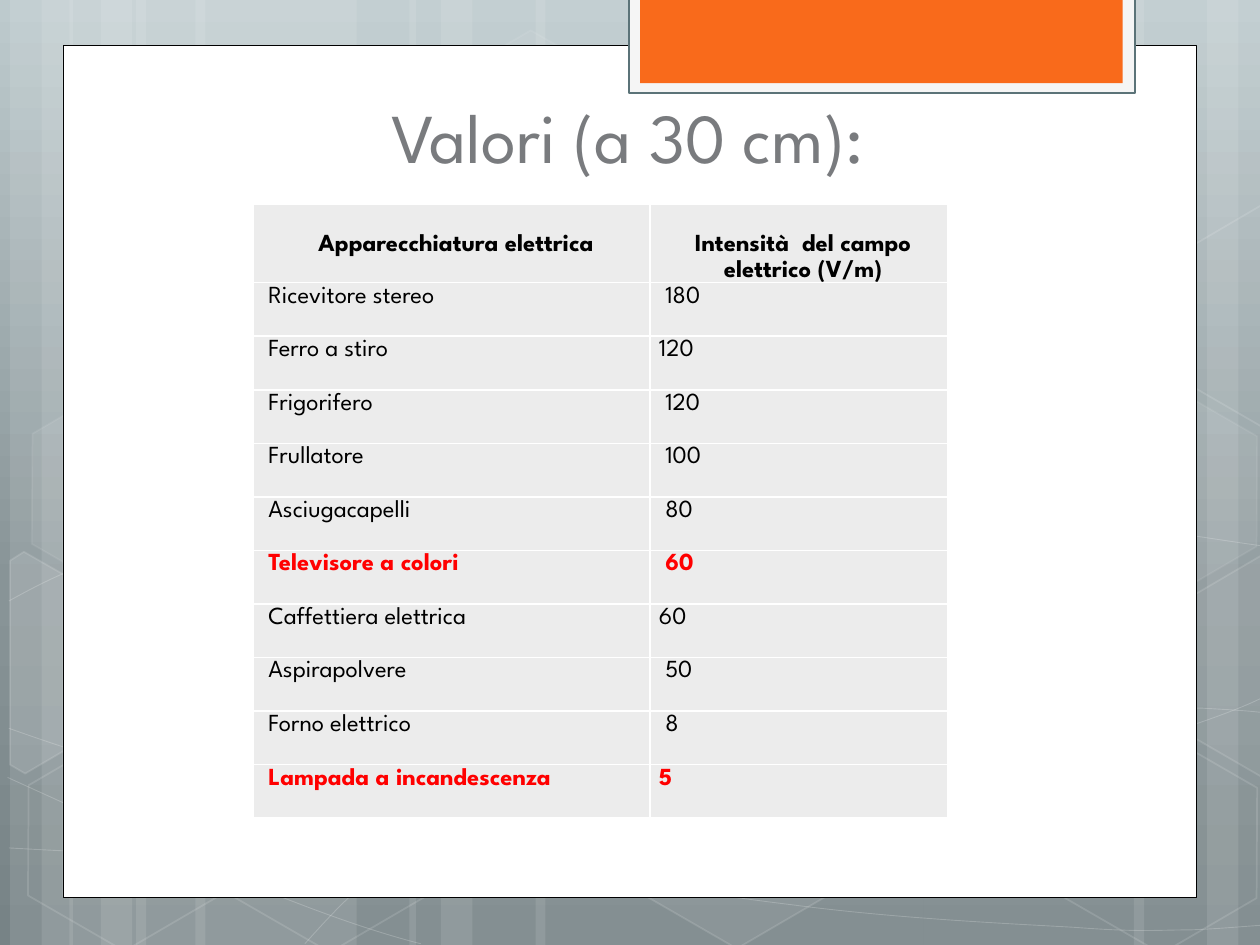
from copy import deepcopy
from pptx import Presentation
from pptx import util as u
from pptx.dml.color import RGBColor
from pptx.enum import shapes, text
from pptx.oxml.ns import qn
from lxml import etree

FONT = "League Spartan"
TITLE = "Valori (a 30 cm):"
HEADERS = ["Apparecchiatura elettrica", "Intensità  del campo elettrico (V/m)"]
NEAR, FAR = 0.07, 0.12
ROWS = [
    ("Ricevitore stereo", "180", FAR, False),
    ("Ferro a stiro", "120", NEAR, False),
    ("Frigorifero", "120", FAR, False),
    ("Frullatore", "100", FAR, False),
    ("Asciugacapelli", "80", FAR, False),
    ("Televisore a colori", "60", FAR, True),
    ("Caffettiera elettrica", "60", NEAR, False),
    ("Aspirapolvere", "50", FAR, False),
    ("Forno elettrico", "8", FAR, False),
    ("Lampada a incandescenza", "5", NEAR, True),
]
COLS = [3.15, 2.36]
HEAD_H, BODY_H = 0.6, 4.25

BACKGROUND = [(0, "BDCACD"), (0.62, "889497"), (1, "778386")]
BARS = [(1.08, 1.75), (0.08, 0.5), (0.33, 0.83), (1.55, 1.75), (0.55, 0.5), (0.8, 0.83),
        (7.33, 1.75), (9.58, 0.5), (9, 0.83), (4.25, 3.08), (3.25, 0.5), (3.5, 0.83)]
CURVES = [
    [(0.07, 6.73), (0.61, 6.76), (1.15, 6.79), (1.9, 6.78), (2.65, 6.77), (3.58, 6.75), (4.58, 6.65),
     (5.58, 6.55), (7, 6.36), (7.92, 6.17), (8.83, 5.98), (9.77, 5.68), (10.07, 5.51)],
    [(0.07, 4.77), (0.36, 4.61), (0.65, 4.46), (1.21, 4.31), (1.78, 4.16), (2.59, 3.94), (3.47, 3.87),
     (4.36, 3.8), (5.44, 3.79), (6.54, 3.87), (7.64, 3.95), (9.47, 4.26), (10.07, 4.34)],
    [(0.06, 6.17), (1.27, 6.72), (2.47, 7.27), (3.34, 7.49)],
    [(0.07, 5.78), (0.38, 5.89), (0.7, 6), (1.28, 6.16), (1.86, 6.31), (2.73, 6.56), (3.57, 6.73),
     (4.4, 6.9), (5.45, 7.08), (6.28, 7.18), (7.11, 7.29), (8, 7.33), (8.53, 7.36),
     (9.05, 7.4), (9.19, 7.38), (9.45, 7.38), (9.71, 7.37), (9.89, 7.35), (10.07, 7.34)],
    [(2.42, 7.49), (2.6, 7.29), (2.78, 7.09), (3.02, 6.91), (3.26, 6.73), (3.6, 6.53), (3.88, 6.39),
     (4.16, 6.25), (4.33, 6.19), (4.7, 6.09), (5.06, 5.99), (5.73, 5.85), (6.08, 5.78),
     (6.44, 5.71), (6.49, 5.71), (6.8, 5.69), (7.11, 5.66), (7.6, 5.63), (7.94, 5.62),
     (8.29, 5.61), (8.86, 5.62), (8.86, 5.62), (9.08, 5.62), (9.3, 5.62), (9.53, 5.62),
     (9.71, 5.63), (9.88, 5.64), (9.97, 5.65), (10.06, 5.66), (10.03, 5.65), (10.06, 5.66)],
]
HEXAGONS = [
    (3.34, 0.36, 4, 8), (4.97, 5.89, 6, 12), (0.11, 5.91, None, 12), (0.14, 3.12, 7, 8),
    (1.74, 5.92, None, 12), (8.34, 5.93, None, 12), (8.34, 3.14, 7, 8),
]
CUT_HEXAGONS = [
    ([(0.08, 4.45), (0.19, 4.38), (0.96, 4.82), (0.95, 5.7), (0.2, 6.14), (0.08, 6.07)], 10),
    ([(9.26, 4.85), (10.01, 4.41), (10.09, 4.46), (10.09, 6.13), (10.02, 6.17), (9.26, 5.73)], 4),
    ([(9.26, 2.07), (10.01, 1.63), (10.1, 1.68), (10.09, 3.35), (10.02, 3.39), (9.26, 2.95)], None),
]
PANELS = [
    ((0.5, 0.36, 9, 6.76), "FFFFFF", ("000000", 0.5)),
    ((4.99, -0.02, 4.02, 0.76), "F5F5F5", ("5B7378", 1.25)),
    ((5.08, -0.02, 3.83, 0.68), "F96A1B", None),
]


def rgb(value):
    return RGBColor.from_string(value)


def paint(fill, colour, alpha=100):
    fill.solid()
    fill.fore_color.rgb = rgb(colour)
    if alpha < 100:
        clr = fill._xPr.find(".//" + qn("a:srgbClr"))
        etree.SubElement(clr, qn("a:alpha"), val=str(alpha * 1000))


def style(sp, fill=None, alpha=100, line=None, line_alpha=100):
    sp.shadow.inherit = False
    if fill:
        paint(sp.fill, fill, alpha)
    else:
        sp.fill.background()
    if line:
        sp.line.width = u.Pt(line[1])
        paint(sp.line.fill, line[0], line_alpha)
    else:
        sp.line.fill.background()


def add_shape(s, kind, box):
    return s.shapes.add_shape(kind, *map(u.Inches, box))


def outline(s, points, close):
    spots = [(u.Inches(x), u.Inches(y)) for x, y in points]
    fb = s.shapes.build_freeform(*spots[0])
    fb.add_line_segments(spots[1:], close=close)
    return fb.convert_to_shape()


def curve(s, points):
    sp = outline(s, points, False)
    lines = list(sp._element.iter(qn("a:lnTo")))
    for i in range(0, len(lines), 3):
        bend = etree.Element(qn("a:cubicBezTo"))
        lines[i].addprevious(bend)
        for line in lines[i:i + 3]:
            bend.append(line[0])
            line.getparent().remove(line)
    return sp


def write(tf, words, size, colour, align, bold=False):
    p = tf.paragraphs[0]
    p.alignment = align
    r = p.add_run()
    r.text = words
    for name, value in {"name": FONT, "size": u.Pt(size), "bold": bold}.items():
        setattr(r.font, name, value)
    r.font.color.rgb = rgb(colour)
    return p


def set_background(s):
    fill = s.background.fill
    fill.gradient()
    fill.gradient_angle = 270
    stops = fill._xPr.find(".//" + qn("a:gsLst"))
    stops.append(deepcopy(stops[-1]))
    for stop, (position, colour) in zip(fill.gradient_stops, BACKGROUND):
        stop.position = position
        stop.color.rgb = rgb(colour)


def add_backdrop(s):
    for left, width in BARS:
        style(add_shape(s, shapes.MSO_SHAPE.RECTANGLE, (left, 0, width, 7.5)), "FFFFFF", 10)
    for points in CURVES:
        style(curve(s, points), line=("FFFFFF", 0.5), line_alpha=20)
    for left, top, alpha, line_alpha in HEXAGONS:
        sp = add_shape(s, shapes.MSO_SHAPE.HEXAGON, (left, top, 1.75, 1.52))
        sp.rotation = 30
        sp.adjustments[0] = 0.285
        style(sp, alpha and "FFFFFF", alpha, ("FFFFFF", 1), line_alpha)
    for points, alpha in CUT_HEXAGONS:
        style(outline(s, points, True), alpha and "FFFFFF", alpha, ("FFFFFF", 1), 12)
    for box, fill, line in PANELS:
        style(add_shape(s, shapes.MSO_SHAPE.RECTANGLE, box), fill, line=line)


def add_title(s):
    sp = s.shapes.title
    sp.left, sp.top, sp.width, sp.height = map(u.Inches, (1.14, 0.21, 7.68, 1.25))
    tf = sp.text_frame
    tf.word_wrap = True
    tf.vertical_anchor = text.MSO_ANCHOR.BOTTOM
    write(tf, TITLE, 40, "797B7E", text.PP_ALIGN.CENTER)
    s.shapes._spTree.append(sp._element)


def fill_cell(cell, words, indent, colour, align, bold, top=0):
    margins = {"margin_left": 0, "margin_right": 0, "margin_top": u.Inches(top), "margin_bottom": 0}
    for name, value in margins.items():
        setattr(cell, name, value)
    p = write(cell.text_frame, words, 14, colour, align, bold)
    p.line_spacing = 1.15
    p._p.get_or_add_pPr().set("marL", str(u.Inches(indent)))
    tc = cell._tc.get_or_add_tcPr()
    for side in ("lnL", "lnR", "lnT", "lnB"):
        ln = etree.SubElement(tc, qn("a:" + side), w=str(u.Pt(1)))
        solid = etree.SubElement(ln, qn("a:solidFill"))
        etree.SubElement(solid, qn("a:srgbClr"), val="FFFFFF")
    paint(cell.fill, "ECECEC")


def add_values(s):
    box = map(u.Inches, (2.01, 1.62, sum(COLS), HEAD_H + BODY_H))
    table = s.shapes.add_table(len(ROWS) + 1, len(COLS), *box).table
    for col, width in zip(table.columns, COLS):
        col.width = u.Inches(width)
    for i, row in enumerate(table.rows):
        row.height = u.Inches(BODY_H / len(ROWS) if i else HEAD_H)
    for j, words in enumerate(HEADERS):
        fill_cell(table.cell(0, j), words, NEAR, "000000", text.PP_ALIGN.CENTER, True, 0.21)
    for i, (device, value, indent, marked) in enumerate(ROWS, 1):
        colour = "FF0000" if marked else "000000"
        for j, (words, left) in enumerate([(device, FAR), (value, indent)]):
            fill_cell(table.cell(i, j), words, left, colour, text.PP_ALIGN.LEFT, marked)


def main():
    prs = Presentation()
    prs.slide_width, prs.slide_height = u.Inches(10), u.Inches(7.5)
    s = prs.slides.add_slide(prs.slide_layouts[5])
    set_background(s)
    add_backdrop(s)
    add_title(s)
    add_values(s)
    prs.save("out.pptx")


if __name__ == "__main__":
    main()
